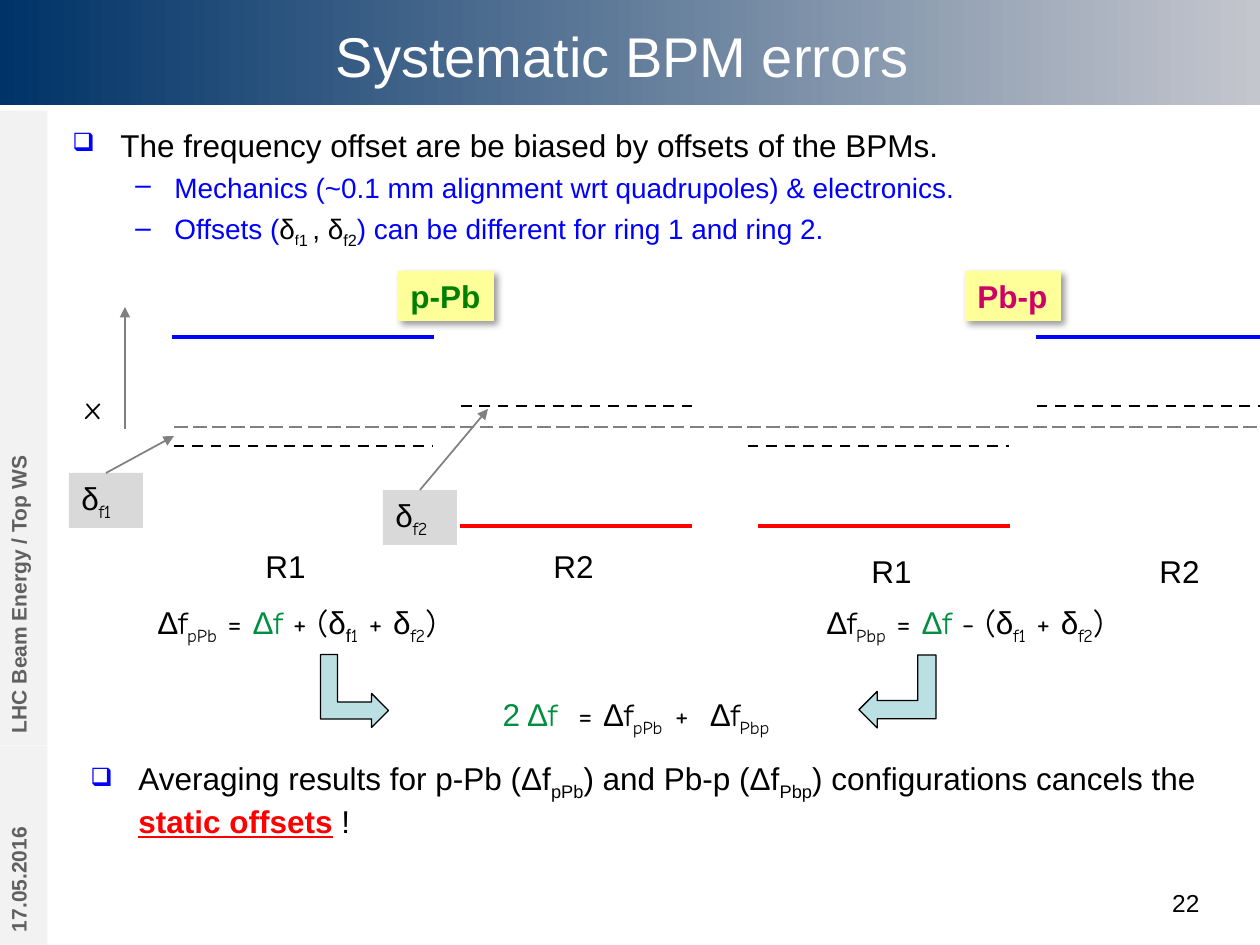
from lxml import etree
from pptx import Presentation
from pptx import util as u
from pptx.dml.color import RGBColor
from pptx.enum import dml, shapes, text
from pptx.oxml.ns import qn

PX = 914400 / 126  # EMU in one px


class Theme:
    sans, hand = "Arial", "Comic Neue"
    black, white, grey = "000000", "FFFFFF", "808080"
    blue, red, green = "0000FF", "FF0000", "008E40"
    band_start, band_end = "003368", "C4C6CD"
    side_fill, side_text = "F2F2F2", "606060"
    label_fill, offset_fill, arrow_fill = "FFFF99", "D9D9D9", "BBE0E3"
    proton_lead, lead_proton = "008000", "CC0066"
    title, body, detail, small, side = 32, 18, 16, 14, 12


SANS, HAND = {"name": Theme.sans}, {"name": Theme.hand}
SUB, BASE = {"sub": True}, {"sub": False}
BLACK, GREEN = {"color": Theme.black}, {"color": Theme.green}


def write_spans(para, spans, **style):
    """Add (words, changes) runs; each change lasts until the next one."""
    style = {"name": Theme.sans, "size": Theme.body, "color": Theme.black,
             "bold": False, "underline": False, "sub": False, **style}
    for words, changes in spans:
        style.update(changes)
        span = para.add_run()
        span.text = words
        font = span.font
        font.name, font.size = style["name"], u.Pt(style["size"])
        font.color.rgb = RGBColor.from_string(style["color"])
        font.bold, font.underline = style["bold"], style["underline"]
        if style["sub"]:
            font._element.set("baseline", "-25000")


def add_box(place, spans=(), fill=None, wrap=True, align=text.PP_ALIGN.LEFT, **style):
    box = page.shapes.add_textbox(*(round(n * PX) for n in place))
    box.text_frame.word_wrap = wrap
    if fill:
        box.fill.solid()
        box.fill.fore_color.rgb = RGBColor.from_string(fill)
    para = box.text_frame.paragraphs[0]
    para.alignment = align
    write_spans(para, spans, **style)
    return box


deck = Presentation()
deck.slide_width, deck.slide_height = round(1260 * PX), round(945 * PX)
page = deck.slides.add_slide(deck.slide_layouts[5])

# Title band and title
band = page.shapes.add_shape(shapes.MSO_SHAPE.RECTANGLE, 0, 0, deck.slide_width, round(105 * PX))
band.shadow.inherit = False
band.line.fill.background()
band.fill.gradient()
band.fill.gradient_angle = 0
for stop, color in zip(band.fill.gradient_stops, (Theme.band_start, Theme.band_end)):
    stop.color.rgb = RGBColor.from_string(color)
page.shapes._spTree.insert(2, band._element)

title = page.shapes.title
title.left, title.top, title.width, title.height = (round(n * PX) for n in (111, 0, 1023, 111))
title.text_frame.vertical_anchor = text.MSO_ANCHOR.MIDDLE
heading = title.text_frame.paragraphs[0]
heading.alignment = text.PP_ALIGN.CENTER
write_spans(heading, [("Systematic BPM errors", {})], size=Theme.title, color=Theme.white)

# Side strip
for place, words in [((-76, 821, 199, 48), "17.05.2016"),
                     ((-294, 404, 635, 48), "LHC Beam Energy / Top WS")]:
    strip = add_box(place, [(words, {})], Theme.side_fill,
                    size=Theme.side, color=Theme.side_text, bold=True)
    strip.rotation = 270

# Diagram labels
add_box((73, 382, 43, 55), [("x", HAND)], wrap=False)
for left, top, ring in [(253, 541, "R1"), (541, 541, "R2"), (859, 546, "R1"), (1147, 546, "R2")]:
    add_box((left, top, 66, 50), [(ring, {})], wrap=False)

offsets = [add_box((left, top, 74, 55), [("δ", {}), (sub, {**HAND, **SUB})], Theme.offset_fill)
           for left, top, sub in [(69, 473, "f1"), (383, 490, "f2")]]

for left, words, color in [(965, "Pb-p", Theme.lead_proton), (398, "p-Pb", Theme.proton_lead)]:
    label = add_box((left, 271, 96, 50), [(words, {})], Theme.label_fill, wrap=False,
                    color=color, bold=True)
    effects = etree.SubElement(label._element.spPr, qn("a:effectLst"))
    shadow = etree.SubElement(effects, qn("a:outerShdw"), blurRad=str(u.Pt(4)),
                              dist=str(u.Pt(3)), dir="2700000", algn="tl", rotWithShape="0")
    tint = etree.SubElement(shadow, qn("a:srgbClr"), val=Theme.black)
    etree.SubElement(tint, qn("a:alpha"), val="40000")

# Orbits, reference lines and pointers
DASH = dml.MSO_LINE.DASH
central = (Theme.grey, 1, dml.MSO_LINE.LONG_DASH, False, None)
upper = (Theme.blue, 2.25, None, False, None)
lower = (Theme.red, 2.25, None, False, None)
biased = (Theme.black, 1.5, DASH, False, None)
pointer = (Theme.grey, 1, None, True)
for start, end, (color, weight, dash, arrow, source) in [
    ((174, 427), (1275, 427), central),
    ((172, 337), (434, 337), upper),
    ((1036, 337), (1275, 337), upper),
    ((460, 526), (692, 526), lower),
    ((758, 526), (1010, 526), lower),
    ((174, 446), (433, 446), biased),
    ((461, 406), (692, 406), biased),
    ((748, 446), (1009, 446), biased),
    ((1037, 406), (1266, 406), biased),
    ((125, 429), (125, 307), (*pointer, None)),
    ((106, 473), (174, 436), (*pointer, offsets[0])),
    ((420, 490), (488, 409), (*pointer, offsets[1])),
]:
    line = page.shapes.add_connector(shapes.MSO_CONNECTOR.STRAIGHT,
                                     *(round(n * PX) for n in start + end))
    line.line.color.rgb = RGBColor.from_string(color)
    line.line.width = u.Pt(weight)
    if dash:
        line.line.dash_style = dash
    if source:
        line.begin_connect(source, 0)
    if arrow:
        etree.SubElement(line.line._get_or_add_ln(), qn("a:tailEnd"), type="triangle")
    etree.SubElement(line._element.spPr, qn("a:effectLst"))

# Formulas
for left, beams, sign, sub_font in [(145, "pPb", "+", SANS), (814, "Pbp", "-", HAND)]:
    add_box((left, 597, 432, 50), [
        ("Δ", {}), ("f", HAND), (beams, SUB), (" = ", BASE),
        ("Δ", {**SANS, **GREEN}), ("f", HAND), (f" {sign} (", BLACK),
        ("δ", SANS), ("f", {**sub_font, **SUB}), ("1", HAND), (" + ", BASE),
        ("δ", SANS), ("f2", {**HAND, **SUB}), (")", BASE)])

add_box((450, 689, 372, 50), [
    ("2 Δ", GREEN), ("f  ", HAND), ("= ", BLACK),
    ("Δ", SANS), ("f", HAND), ("pPb  ", SUB), ("+  ", BASE),
    ("Δ", SANS), ("f", HAND), ("Pbp", SUB)], align=text.PP_ALIGN.CENTER)

for place, flipped in [((318, 657, 73, 68), False), ((861, 653, 73, 77), True)]:
    bend = page.shapes.add_shape(shapes.MSO_SHAPE.BENT_UP_ARROW, *(round(n * PX) for n in place))
    bend.rotation = 90
    bend.shadow.inherit = False
    bend.fill.solid()
    bend.fill.fore_color.rgb = RGBColor.from_string(Theme.arrow_fill)
    bend.line.color.rgb = RGBColor.from_string(Theme.black)
    bend.line.width = u.Pt(0.75)
    if flipped:
        bend._element.spPr.find(qn("a:xfrm")).set("flipV", "1")

# Bulleted statements: (level, spans)
intro = [
    (0, [("The frequency offset are be biased by offsets of the BPMs.", {})]),
    (1, [("Mechanics (~0.1 mm alignment wrt quadrupoles) & electronics.", {})]),
    (1, [("Offsets (", {}), ("δ", BLACK), ("f", {"size": Theme.small, **SUB}),
         ("1 ", {"size": Theme.detail}), (", δ", BASE), ("f2", SUB),
         (") can be different for ring 1 and ring 2.", {"color": Theme.blue, **BASE})]),
]
conclusion = [
    (0, [("Averaging results for p-Pb (Δf", {}), ("pPb", SUB), (") and Pb-p (Δf", BASE),
         ("Pbp", SUB), (") configurations cancels the ", BASE),
         ("static offsets", {"color": Theme.red, "bold": True, "underline": True}),
         (" !", {**BLACK, "bold": False, "underline": False})]),
]
for place, statements in [((60, 120, 1191, 135), intro), ((78, 753, 1191, 110), conclusion)]:
    frame = add_box(place).text_frame
    for index, (level, spans) in enumerate(statements):
        para = frame.add_paragraph() if index else frame.paragraphs[0]
        para.level = level
        margin, hang, mark = [(48, 48, "❑"), (102, 39, "–")][level]
        props = para._p.get_or_add_pPr()
        props.set("marL", str(round(margin * PX)))
        props.set("indent", str(round(-hang * PX)))
        if level == 0:
            tint = etree.SubElement(props, qn("a:buClr"))
            etree.SubElement(tint, qn("a:srgbClr"), val=Theme.blue)
            etree.SubElement(props, qn("a:buSzPct"), val="80000")
        etree.SubElement(props, qn("a:buChar"), char=mark)
        if index:
            para.space_before = u.Pt(4)
        write_spans(para, spans, size=(Theme.body, Theme.detail)[level],
                    color=(Theme.black, Theme.blue)[level])

add_box((1086, 882, 126, 44), [("22", {})], align=text.PP_ALIGN.RIGHT, size=Theme.small)

deck.save("out.pptx")
